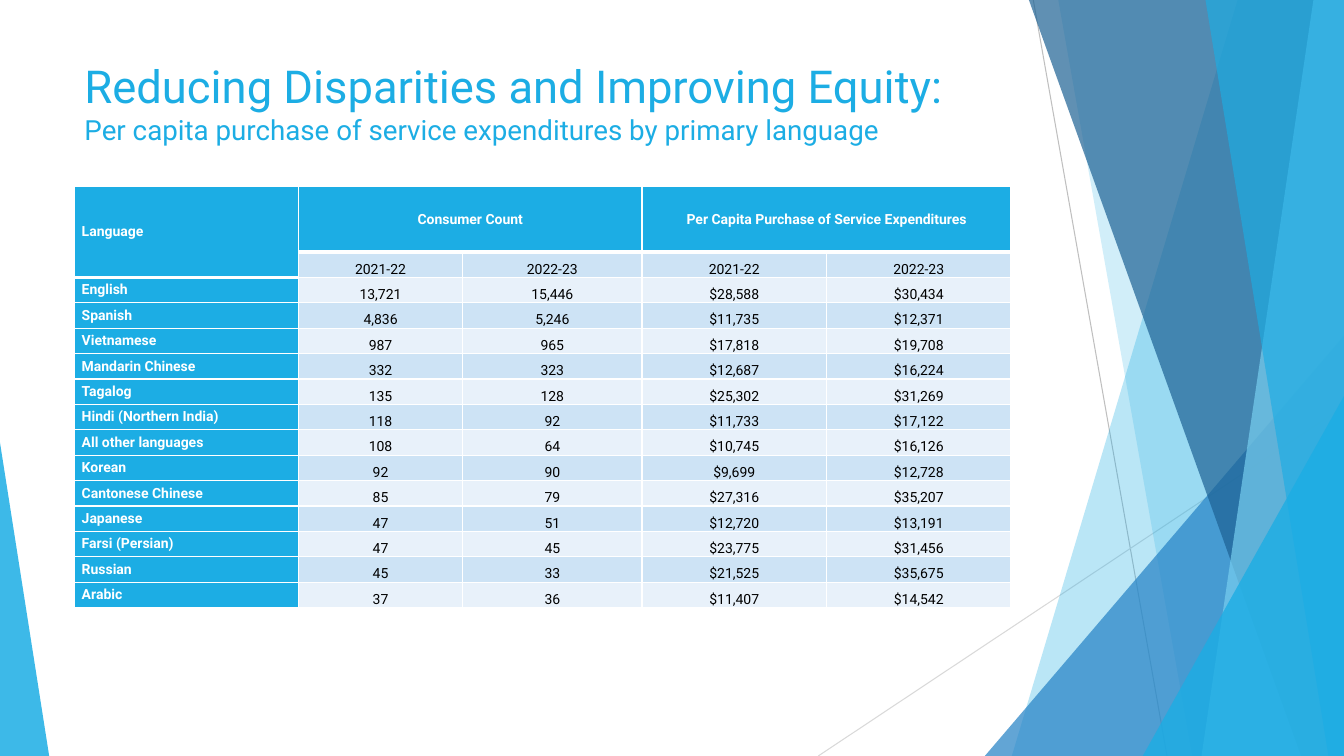
"""Build the slide on per capita service expenditures by primary language."""
from dataclasses import dataclass

from lxml import etree
from pptx import Presentation
from pptx.dml.color import RGBColor
from pptx.enum.shapes import MSO_CONNECTOR, MSO_SHAPE
from pptx.enum.text import MSO_ANCHOR, PP_ALIGN
from pptx.oxml.ns import qn
from pptx.util import Cm, Pt

STRAIGHT = MSO_CONNECTOR.STRAIGHT
TRIANGLE = MSO_SHAPE.ISOSCELES_TRIANGLE
TOP, MIDDLE, BOTTOM = MSO_ANCHOR.TOP, MSO_ANCHOR.MIDDLE, MSO_ANCHOR.BOTTOM
LEFT, CENTER = PP_ALIGN.LEFT, PP_ALIGN.CENTER

WHITE = RGBColor(0xFF, 0xFF, 0xFF)
BLACK = RGBColor(0x00, 0x00, 0x00)
CYAN = RGBColor(0x1C, 0xAD, 0xE4)
LIGHT_CYAN = RGBColor(0x77, 0xCE, 0xEF)
BLUE = RGBColor(0x26, 0x83, 0xC6)
DARK_BLUE = RGBColor(0x1D, 0x62, 0x94)
BAND_DARK = RGBColor(0xCD, 0xE3, 0xF5)
BAND_LIGHT = RGBColor(0xE8, 0xF1, 0xFA)
GRAY = RGBColor(0xBF, 0xBF, 0xBF)
LIGHT_GRAY = RGBColor(0xD9, 0xD9, 0xD9)

FONT = "Roboto"
WIDTH, HEIGHT = 33.87, 19.05
COLUMN_WIDTHS = (5.64, 4.14, 4.52, 4.65, 4.65)
HEADER_HEIGHT, ROW_HEIGHT = 1.65, 0.64


@dataclass
class Ray:
    """A thin line across the background."""
    start: tuple[float, float]
    end: tuple[float, float]
    color: RGBColor


@dataclass
class Facet:
    """A translucent panel from a slanted left edge to the slide's right edge."""
    top_left: float
    bottom_left: float
    color: RGBColor
    opacity: int


@dataclass
class Wedge:
    """A translucent right triangle standing on the slide's bottom edge."""
    left: float
    top: float
    width: float
    apex: float
    color: RGBColor
    opacity: int


RAYS = (
    Ray((26.04, 0), (29.41, HEIGHT), GRAY),
    Ray((WIDTH, 10.24), (20.62, HEIGHT), LIGHT_GRAY),
)
DECORATIONS = (
    Facet(31.19, 25.5, CYAN, 30),
    Facet(26.67, 30.05, CYAN, 20),
    Wedge(24.82, 8.46, 9.05, 1, BLUE, 72),
    Facet(25.93, 32.79, DARK_BLUE, 70),
    Facet(33.1, 30.28, LIGHT_CYAN, 70),
    Facet(30.38, 33.48, CYAN, 65),
    Wedge(28.8, 9.98, 5.07, 1, CYAN, 80),
    Wedge(0, 11.15, 1.24, 0, CYAN, 85),
)
ROWS = (
    ("Language", "Consumer Count", "", "Per Capita Purchase of Service Expenditures", ""),
    ("", "2021-22", "2022-23", "2021-22", "2022-23"),
    ("English", "13,721", "15,446", "$28,588", "$30,434"),
    ("Spanish", "4,836", "5,246", "$11,735", "$12,371"),
    ("Vietnamese", "987", "965", "$17,818", "$19,708"),
    ("Mandarin Chinese", "332", "323", "$12,687", "$16,224"),
    ("Tagalog", "135", "128", "$25,302", "$31,269"),
    ("Hindi (Northern India)", "118", "92", "$11,733", "$17,122"),
    ("All other languages", "108", "64", "$10,745", "$16,126"),
    ("Korean", "92", "90", "$9,699", "$12,728"),
    ("Cantonese Chinese", "85", "79", "$27,316", "$35,207"),
    ("Japanese", "47", "51", "$12,720", "$13,191"),
    ("Farsi (Persian)", "47", "45", "$23,775", "$31,456"),
    ("Russian", "45", "33", "$21,525", "$35,675"),
    ("Arabic", "37", "36", "$11,407", "$14,542"),
)


def draw_ray(page, ray: Ray) -> None:
    """Draw one background line without a shadow."""
    line = page.shapes.add_connector(STRAIGHT, *map(Cm, ray.start + ray.end))
    line.line.color.rgb = ray.color
    line.line.width = Pt(0.75)
    etree.SubElement(line._element.spPr, qn("a:effectLst"))


def draw_decoration(page, item: Facet | Wedge) -> None:
    """Draw one translucent facet or wedge."""
    if isinstance(item, Facet):
        builder = page.shapes.build_freeform(Cm(item.top_left), 0)
        corners = ((WIDTH, 0), (WIDTH, HEIGHT), (item.bottom_left, HEIGHT))
        builder.add_line_segments([(Cm(x), Cm(y)) for x, y in corners])
        shape = builder.convert_to_shape()
    else:
        box = (item.left, item.top, item.width, HEIGHT - item.top)
        shape = page.shapes.add_shape(TRIANGLE, *map(Cm, box))
        shape.adjustments[0] = item.apex
    shape.shadow.inherit = False
    shape.line.fill.background()
    shape.fill.solid()
    shape.fill.fore_color.rgb = item.color
    color = shape._element.spPr.find(qn("a:solidFill"))[0]
    etree.SubElement(color, qn("a:alpha"), val=str(item.opacity * 1000))


def draw_title(page) -> None:
    """Draw the heading and its smaller second line."""
    box = page.shapes.add_textbox(Cm(1.88), Cm(1.35), Cm(23.88), Cm(2.87))
    frame = box.text_frame
    frame.word_wrap = True
    frame.vertical_anchor = TOP
    para = frame.paragraphs[0]
    para.font.name = FONT
    para.font.color.rgb = CYAN
    heading = para.add_run()
    heading.text = "Reducing Disparities and Improving Equity:"
    heading.font.size = Pt(32.4)
    para.add_line_break()
    subtitle = para.add_run()
    subtitle.text = "Per capita purchase of service expenditures by primary language"
    subtitle.font.size = Pt(19.8)


def set_borders(cell, bottom: float) -> None:
    """Give a cell white borders, with its own width at the bottom."""
    properties = cell._tc.get_or_add_tcPr()
    for side, width in (("L", 1), ("R", 1), ("T", 1), ("B", bottom)):
        line = etree.SubElement(properties, qn(f"a:ln{side}"), w=str(Pt(width)))
        fill = etree.SubElement(line, qn("a:solidFill"))
        etree.SubElement(fill, qn("a:srgbClr"), val=str(WHITE))


def style_cell(cell, text: str, row: int, column: int) -> None:
    """Fill a cell and set its text according to its place in the table."""
    heading = row == 0 or column == 0
    band = BAND_LIGHT if row % 2 == 0 else BAND_DARK
    set_borders(cell, 3 if row == 0 or (row, column) == (1, 0) else 1)
    cell.fill.solid()
    cell.fill.fore_color.rgb = CYAN if heading else band
    cell.margin_left = cell.margin_right = Cm(0.18)
    cell.margin_top = cell.margin_bottom = 0
    cell.vertical_anchor = MIDDLE if heading else BOTTOM
    para = cell.text_frame.paragraphs[0]
    para.text = text
    para.alignment = CENTER if column else LEFT
    para.font.name = FONT
    para.font.size = Pt(10)
    para.font.bold = heading
    para.font.color.rgb = WHITE if heading else BLACK


def draw_table(page) -> None:
    """Draw the table of counts and expenditures."""
    height = HEADER_HEIGHT + ROW_HEIGHT * (len(ROWS) - 1)
    frame = page.shapes.add_table(len(ROWS), len(COLUMN_WIDTHS), Cm(1.88), Cm(4.7),
                                  Cm(sum(COLUMN_WIDTHS)), Cm(height))
    table = frame.table
    for column, width in zip(table.columns, COLUMN_WIDTHS):
        column.width = Cm(width)
    for index, texts in enumerate(ROWS):
        table.rows[index].height = Cm(ROW_HEIGHT if index else HEADER_HEIGHT)
        for column, text in enumerate(texts):
            style_cell(table.cell(index, column), text, index, column)
    for first, last in (((0, 0), (1, 0)), ((0, 1), (0, 2)), ((0, 3), (0, 4))):
        table.cell(*first).merge(table.cell(*last))


def main() -> None:
    """Build and save the deck."""
    deck = Presentation()
    deck.slide_width, deck.slide_height = Cm(WIDTH), Cm(HEIGHT)
    page = deck.slides.add_slide(deck.slide_layouts[6])
    for ray in RAYS:
        draw_ray(page, ray)
    for item in DECORATIONS:
        draw_decoration(page, item)
    draw_title(page)
    draw_table(page)
    deck.save("out.pptx")


if __name__ == "__main__":
    main()
